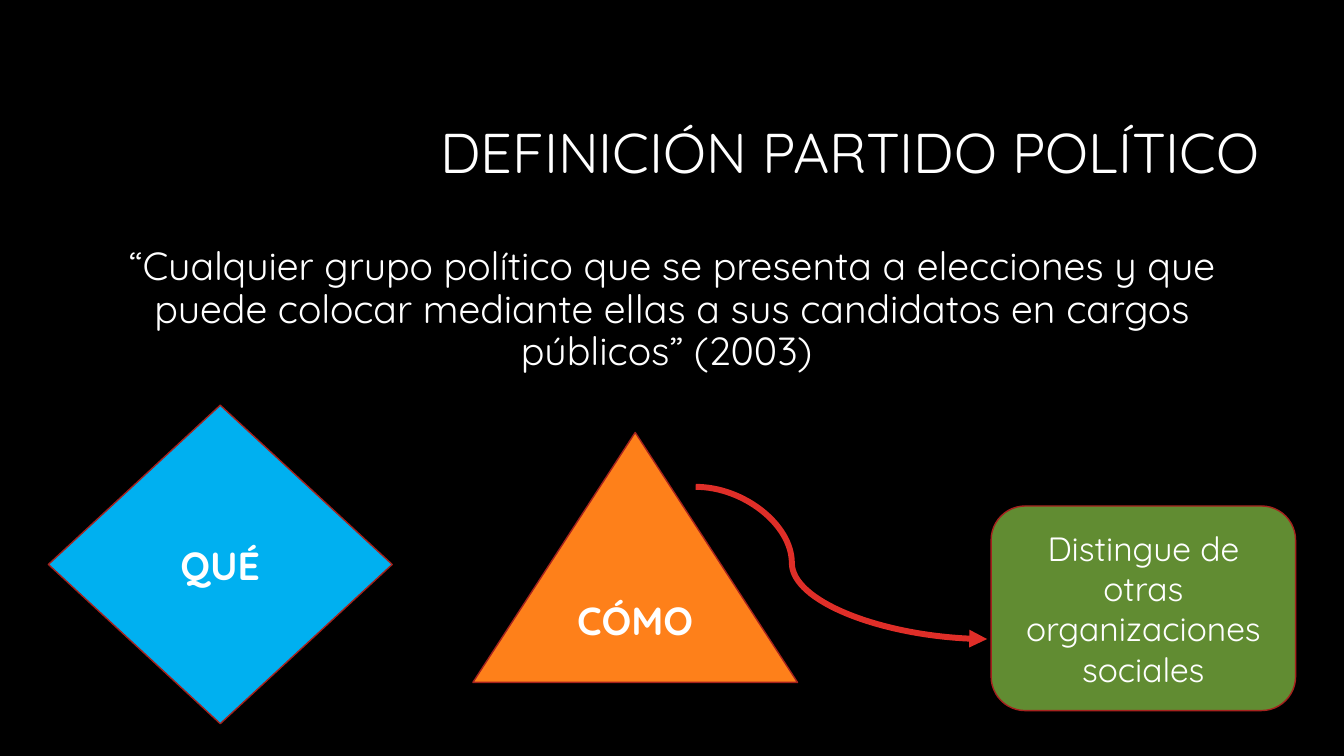
from lxml import etree
from pptx import Presentation
from pptx.dml.color import RGBColor
from pptx.enum.shapes import MSO_CONNECTOR, MSO_SHAPE
from pptx.enum.text import MSO_ANCHOR, PP_ALIGN
from pptx.oxml.ns import qn
from pptx.util import Inches, Pt

DIAMOND = MSO_SHAPE.DIAMOND
TRIANGLE = MSO_SHAPE.ISOSCELES_TRIANGLE
ROUNDED = MSO_SHAPE.ROUNDED_RECTANGLE
CURVE = MSO_CONNECTOR.CURVE
MIDDLE, TOP = MSO_ANCHOR.MIDDLE, MSO_ANCHOR.TOP
CENTER, RIGHT = PP_ALIGN.CENTER, PP_ALIGN.RIGHT

FONT = "Quicksand"
COLORS = {
    "background": "000000",
    "text": "FFFFFF",
    "outline": "A5221E",
    "arrow": "DF2E28",
    "what": "00B0F0",
    "how": "FE801A",
    "distinction": "618C32",
}


def rgb(name):
    return RGBColor.from_string(COLORS[name])


def write(frame, text, size=28, bold=False, align=CENTER, anchor=MIDDLE, spacing=1.0):
    frame.word_wrap = True
    frame.vertical_anchor = anchor
    paragraph = frame.paragraphs[0]
    paragraph.alignment = align
    paragraph.line_spacing = spacing
    run = paragraph.add_run()
    run.text = text
    run.font.name = FONT
    run.font.size = Pt(size)
    run.font.bold = bold
    run.font.color.rgb = rgb("text")


class SlideBuilder:
    """Adds styled elements to the current slide."""

    def __init__(self, slide):
        self.slide = slide
        slide.background.fill.solid()
        slide.background.fill.fore_color.rgb = rgb("background")

    def text(self, box, text, **style):
        textbox = self.slide.shapes.add_textbox(*map(Inches, box))
        write(textbox.text_frame, text, spacing=0.9, **style)

    def shape(self, kind, box, color, text, **style):
        shape = self.slide.shapes.add_shape(kind, *map(Inches, box))
        shape.shadow.inherit = False
        shape.fill.solid()
        shape.fill.fore_color.rgb = rgb(color)
        shape.line.color.rgb = rgb("outline")
        shape.line.width = Pt(1)
        write(shape.text_frame, text, **style)

    def curved_arrow(self, start, end, bend):
        arrow = self.slide.shapes.add_connector(CURVE, *map(Inches, start + end))
        arrow.line.color.rgb = rgb("arrow")
        arrow.line.width = Pt(4.25)
        properties = arrow._element.spPr
        guides = properties.find(qn("a:prstGeom")).find(qn("a:avLst"))
        etree.SubElement(guides, qn("a:gd"), name="adj1", fmla=f"val {round(bend * 100000)}")
        etree.SubElement(arrow.line._get_or_add_ln(), qn("a:tailEnd"), type="triangle")
        etree.SubElement(properties, qn("a:effectLst"))


def main():
    presentation = Presentation()
    presentation.slide_width = Inches(13.33)
    presentation.slide_height = Inches(7.5)
    builder = SlideBuilder(presentation.slides.add_slide(presentation.slide_layouts[6]))

    builder.text((3.17, 0.84, 9.42, 1.41), "DEFINICIÓN PARTIDO POLÍTICO", size=40, align=RIGHT)
    builder.text(
        (0.75, 2.4, 11.83, 4.93),
        "“Cualquier grupo político que se presenta a elecciones y que puede colocar "
        "mediante ellas a sus candidatos en cargos públicos” (2003) ",
        anchor=TOP,
    )
    builder.shape(DIAMOND, (0.48, 4.02, 3.41, 3.16), "what", "QUÉ", bold=True)
    builder.shape(TRIANGLE, (4.69, 4.29, 3.22, 2.48), "how", "CÓMO", bold=True)
    builder.shape(
        ROUNDED,
        (9.83, 5.02, 3.02, 2.03),
        "distinction",
        "Distingue de otras organizaciones sociales",
        size=24,
    )
    builder.curved_arrow((6.9, 4.83), (9.79, 6.34), bend=0.33)

    presentation.save("out.pptx")


if __name__ == "__main__":
    main()
